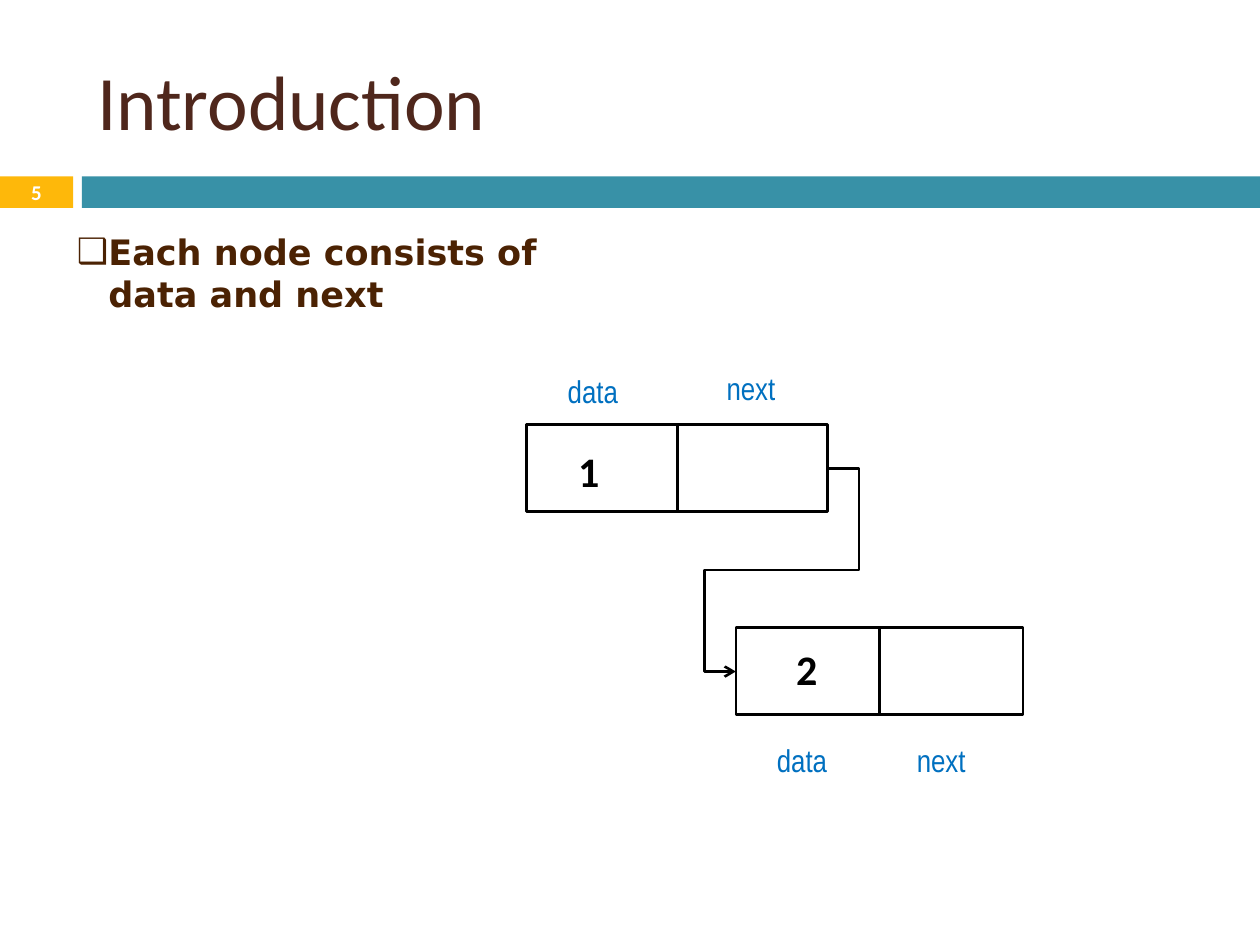
from lxml.etree import SubElement
from pptx import Presentation
from pptx.dml.color import RGBColor
from pptx.enum.shapes import MSO_CONNECTOR, MSO_SHAPE
from pptx.enum.text import MSO_ANCHOR, MSO_AUTO_SIZE, PP_ALIGN
from pptx.oxml.ns import qn
from pptx.util import Inches, Pt

COLORS = {
    "title": "4F271C", "body": "4B2203", "label": "0070C0",
    "marker": "FEB80A", "band": "3891A7", "black": "000000", "white": "FFFFFF",
}
NODE_HEIGHT = 0.69
LABEL_HEIGHT = 0.4
ELBOW_REACH = 0.25


def rgb(name):
    return RGBColor.from_string(COLORS[name])


def place(shape, *box):
    shape.left, shape.top, shape.width, shape.height = map(Inches, box)


def write(shape, text, size, font, color, bold=False, align=PP_ALIGN.LEFT,
          anchor=MSO_ANCHOR.TOP, wrap=True):
    frame = shape.text_frame
    frame.text = text
    frame.word_wrap = wrap
    frame.auto_size = MSO_AUTO_SIZE.NONE
    frame.vertical_anchor = anchor
    paragraph = frame.paragraphs[0]
    paragraph.alignment = align
    paragraph.space_before = Pt(0)
    paragraph.font.size = Pt(size)
    paragraph.font.name = font
    paragraph.font.bold = bold
    paragraph.font.color.rgb = rgb(color)
    return paragraph


def add_box(slide, box, fill, outline=None):
    rect = slide.shapes.add_shape(MSO_SHAPE.RECTANGLE, *map(Inches, box))
    rect.shadow.inherit = False
    rect.fill.solid()
    rect.fill.fore_color.rgb = rgb(fill)
    if outline:
        rect.line.color.rgb = rgb(outline)
        rect.line.width = Pt(1.5)
    else:
        rect.line.fill.background()
    return rect


def add_text(slide, box, text, *style, fill=None, **layout):
    text_box = slide.shapes.add_textbox(*map(Inches, box))
    if fill:
        text_box.fill.solid()
        text_box.fill.fore_color.rgb = rgb(fill)
    write(text_box, text, *style, **layout)


def add_line(slide, kind, start, end):
    line = slide.shapes.add_connector(kind, *map(Inches, (*start, *end)))
    line.line.color.rgb = rgb("black")
    line.line.width = Pt(1.5)
    SubElement(line._element.spPr, qn("a:effectLst"))
    return line


def add_node(slide, left, top, width, value, value_at):
    node = add_box(slide, (left, top, width, NODE_HEIGHT), "white", "black")
    middle = left + width / 2
    divider = add_line(slide, MSO_CONNECTOR.STRAIGHT,
                       (middle, top), (middle, top + NODE_HEIGHT))
    divider.begin_connect(node, 0)
    divider.end_connect(node, 2)
    add_text(slide, (*value_at, 0.49, 0.5), value, 24, "Calibri", "black",
             bold=True, wrap=False, fill="white")


def add_label(slide, text, left, top, width):
    add_text(slide, (left, top, width, LABEL_HEIGHT), text, 18, "Arial Narrow",
             "label", align=PP_ALIGN.CENTER, fill="white")


def add_next_link(slide, start, end):
    link = add_line(slide, MSO_CONNECTOR.ELBOW, start, end)
    reach = round(ELBOW_REACH / (start[0] - end[0]) * 100000)
    geometry = link._element.spPr.find(qn("a:prstGeom"))
    geometry.set("prst", "bentConnector5")
    guides = geometry.find(qn("a:avLst"))
    if guides is None:
        guides = SubElement(geometry, qn("a:avLst"))
    for number, value in enumerate((-reach, 50000, 100000 + reach), 1):
        SubElement(guides, qn("a:gd"), name=f"adj{number}", fmla=f"val {value}")
    SubElement(link.line._get_or_add_ln(), qn("a:tailEnd"), type="arrow")


def set_bullet(paragraph, symbol, indent):
    properties = paragraph._p.get_or_add_pPr()
    properties.set("marL", str(Inches(indent)))
    properties.set("indent", str(-Inches(indent)))
    SubElement(properties, qn("a:buFont"), typeface="DejaVu Sans")
    SubElement(properties, qn("a:buChar"), char=symbol)
    defaults = properties.find(qn("a:defRPr"))
    if defaults is not None:
        properties.append(defaults)


def main():
    deck = Presentation()
    deck.slide_width, deck.slide_height = Inches(10), Inches(7.5)
    slide = deck.slides.add_slide(deck.slide_layouts[1])
    title, body = slide.placeholders

    add_box(slide, (0, 1.4, 0.58, 0.25), "marker")
    add_box(slide, (0.65, 1.4, 9.35, 0.25), "band")
    add_text(slide, (0, 1.39, 0.58, 0.27), "5", 12, "Calibri", "white",
             bold=True, align=PP_ALIGN.CENTER, anchor=MSO_ANCHOR.MIDDLE)

    place(title, 0.67, 0.25, 8.92, 1.08)
    write(title, "Introduction", 44, "Calibri", "title", anchor=MSO_ANCHOR.MIDDLE)
    place(body, 0.51, 1.78, 4.41, 1.11)
    statement = write(body, "Each node consists of data and next", 20,
                      "DejaVu Sans", "body", bold=True)
    set_bullet(statement, "❑", 0.25)

    add_node(slide, 4.18, 3.37, 2.39, "1", (4.49, 3.49))
    add_node(slide, 5.84, 4.98, 2.28, "2", (6.22, 5.06))
    add_next_link(slide, (6.57, 3.72), (5.84, 5.33))

    for data_left, data_top, next_left, next_top in (
            (3.98, 2.9, 5.44, 2.88), (5.64, 5.83, 6.95, 5.83)):
        add_label(slide, "data", data_left, data_top, 1.45)
        add_label(slide, "next", next_left, next_top, 1.04)

    deck.save("out.pptx")


if __name__ == "__main__":
    main()
